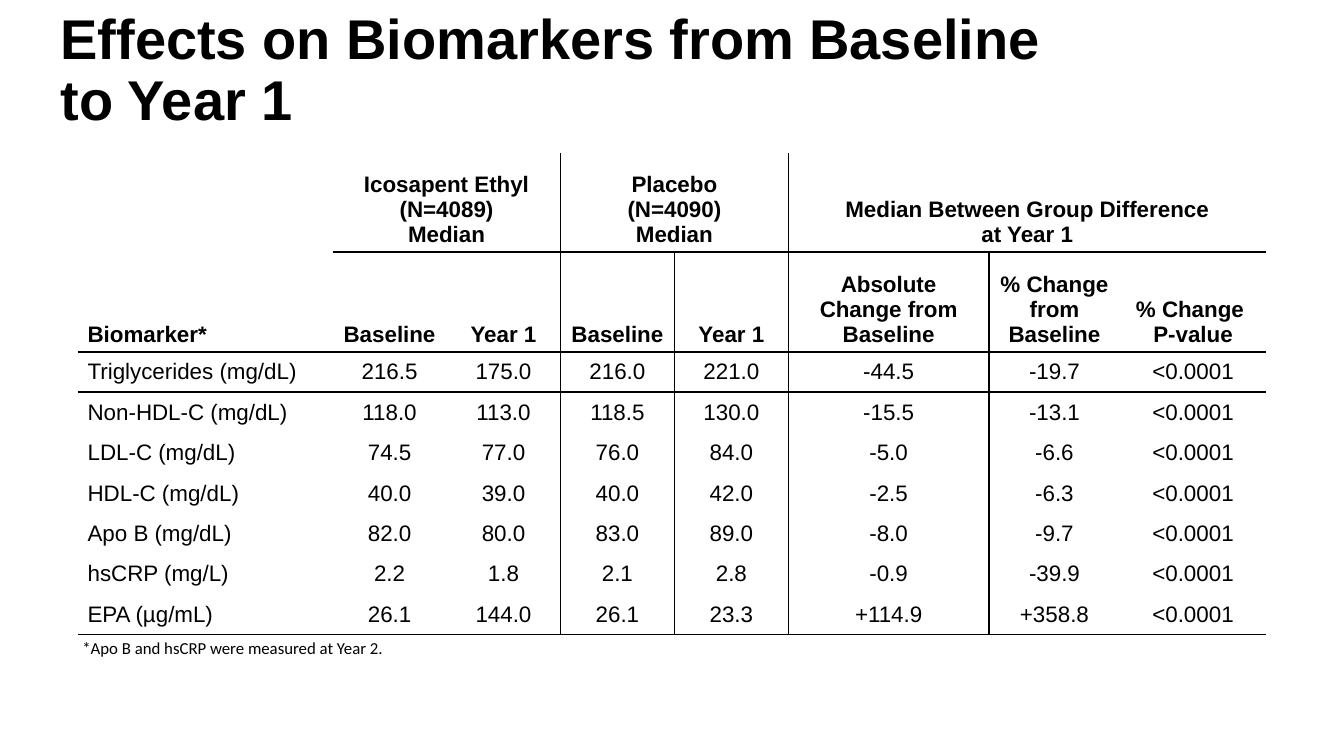
import copy

import pptx
import pptx.dml.color
import pptx.enum.text
import pptx.oxml
import pptx.oxml.ns
import pptx.util

Pt = pptx.util.Pt
Align = pptx.enum.text.PP_ALIGN
Anchor = pptx.enum.text.MSO_ANCHOR
AutoSize = pptx.enum.text.MSO_AUTO_SIZE
qn = pptx.oxml.ns.qn

HEADINGS = [
    ["Biomarker*", "Icosapent Ethyl\v(N=4089)\vMedian", "", "Placebo\v(N=4090)\vMedian", "",
     "Median Between Group Difference\nat Year 1", "", ""],
    ["", "Baseline", "Year 1", "Baseline", "Year 1", "Absolute\vChange from\vBaseline",
     "% Change from\vBaseline", "% Change \vP-value"],
]
BIOMARKERS = [
    ["Triglycerides (mg/dL)", "216.5", "175.0", "216.0", "221.0", "-44.5", "-19.7", "<0.0001"],
    ["Non-HDL-C (mg/dL)", "118.0", "113.0", "118.5", "130.0", "-15.5", "-13.1", "<0.0001"],
    ["LDL-C (mg/dL)", "74.5", "77.0", "76.0", "84.0", "-5.0", "-6.6", "<0.0001"],
    ["HDL-C (mg/dL)", "40.0", "39.0", "40.0", "42.0", "-2.5", "-6.3", "<0.0001"],
    ["Apo B (mg/dL)", "82.0", "80.0", "83.0", "89.0", "-8.0", "-9.7", "<0.0001"],
    ["hsCRP (mg/L)", "2.2", "1.8", "2.1", "2.8", "-0.9", "-39.9", "<0.0001"],
    ["EPA (µg/mL)", "26.1", "144.0", "26.1", "23.3", "+114.9", "+358.8", "<0.0001"],
]
COLUMN_WIDTHS = [182.2, 81.4, 81.4, 81.4, 81.4, 143.3, 93.6, 104.4]
ROW_HEIGHTS = [70.6, 71.3] + [28.9] * len(BIOMARKERS)
MERGES = [(0, 0, 1, 0), (0, 1, 0, 2), (0, 3, 0, 4), (0, 5, 0, 7)]
GROUP_STARTS = (3, 5)
NO_STYLE = "{2D5ABB26-0587-4C30-8999-92F81FD0307C}"


def color(hex_code):
    return pptx.dml.color.RGBColor.from_string(hex_code)


def write(frame, text, size=16, font="Arial", ink="000000", bold=False,
          align=Align.LEFT, spacing=None):
    for index, line in enumerate(text.split("\n")):
        paragraph = frame.add_paragraph() if index else frame.paragraphs[0]
        paragraph.text = line
        paragraph.alignment = align
        if spacing:
            paragraph.line_spacing = spacing
        for run in paragraph.runs:
            run.font.size = Pt(size)
            run.font.name = font
            run.font.bold = bold
            run.font.color.rgb = color(ink)
        for line_break in paragraph._p.findall(qn("a:br")):
            line_break.append(copy.deepcopy(paragraph.runs[0]._r.rPr))


class BiomarkerSlide:
    """Holds the style and the current slide, and adds its elements."""

    ink = "000000"
    paper = "FFFFFF"

    def __init__(self, deck):
        self.slide = deck.slides.add_slide(deck.slide_layouts[5])

    def title(self, text, left, top, width, height):
        heading = self.slide.shapes.title
        heading.left, heading.top = Pt(left), Pt(top)
        heading.width, heading.height = Pt(width), Pt(height)
        frame = heading.text_frame
        frame.auto_size = AutoSize.NONE
        frame.vertical_anchor = Anchor.MIDDLE
        write(frame, text, size=40, ink=self.ink, bold=True, spacing=0.9)

    def footnote(self, text, left, top, width, height):
        frame = self.slide.shapes.add_textbox(Pt(left), Pt(top), Pt(width), Pt(height)).text_frame
        frame.word_wrap = True
        frame.auto_size = AutoSize.SHAPE_TO_FIT_TEXT
        write(frame, text, size=12, font="Calibri", ink=self.ink)

    def border(self, cell, side, width):
        line = pptx.oxml.parse_xml(
            f'<a:ln{side} xmlns:a="http://schemas.openxmlformats.org/drawingml/2006/main" '
            f'w="{Pt(width)}"><a:solidFill><a:srgbClr val="{self.ink}"/></a:solidFill></a:ln{side}>')
        cell._tc.get_or_add_tcPr().append(line)

    def rules(self, cell, row, column):
        last_row = row + (cell.span_height if cell.is_merge_origin else 1)
        last_column = column + (cell.span_width if cell.is_merge_origin else 1)
        widths = {
            "L": 1 if column in GROUP_STARTS else 0,
            "R": 1 if last_column in GROUP_STARTS else 0,
            "T": self.row_rule(row, column),
            "B": self.row_rule(last_row, column),
        }
        for side, width in widths.items():
            if width:
                self.border(cell, side, width)

    def row_rule(self, boundary, column):
        if boundary == 1:
            return 1.5 if column else 0
        return {len(HEADINGS): 1.5, len(ROW_HEIGHTS): 1}.get(boundary, 0)

    def table(self, rows, left, top):
        frame = self.slide.shapes.add_table(len(rows), len(COLUMN_WIDTHS), Pt(left), Pt(top),
                                            Pt(sum(COLUMN_WIDTHS)), Pt(sum(ROW_HEIGHTS)))
        table = frame.table
        table.first_row = table.horz_banding = False
        table._tbl.tblPr.find(qn("a:tableStyleId")).text = NO_STYLE
        for column, width in zip(table.columns, COLUMN_WIDTHS):
            column.width = Pt(width)
        for row, height in zip(table.rows, ROW_HEIGHTS):
            row.height = Pt(height)
        for row, column, last_row, last_column in MERGES:
            table.cell(row, column).merge(table.cell(last_row, last_column))
        for row, texts in enumerate(rows):
            heading = row < len(HEADINGS)
            for column, text in enumerate(texts):
                cell = table.cell(row, column)
                self.rules(cell, row, column)
                if heading:
                    cell.fill.background()
                else:
                    cell.fill.solid()
                    cell.fill.fore_color.rgb = color(self.paper)
                cell.vertical_anchor = Anchor.BOTTOM if heading else Anchor.MIDDLE
                if text:
                    write(cell.text_frame, text, ink=self.ink, bold=heading,
                          align=Align.CENTER if column else Align.LEFT)


def main():
    deck = pptx.Presentation()
    deck.slide_width, deck.slide_height = Pt(960), Pt(540)
    slide = BiomarkerSlide(deck)
    slide.table(HEADINGS + BIOMARKERS, 55.4, 109.4)
    slide.title("Effects on Biomarkers from Baseline \vto Year 1", 36, -0.7, 828, 104.4)
    slide.footnote("*Apo B and hsCRP were measured at Year 2.", 51.8, 452.2, 374.4, 21.6)
    deck.save("out.pptx")


if __name__ == "__main__":
    main()
